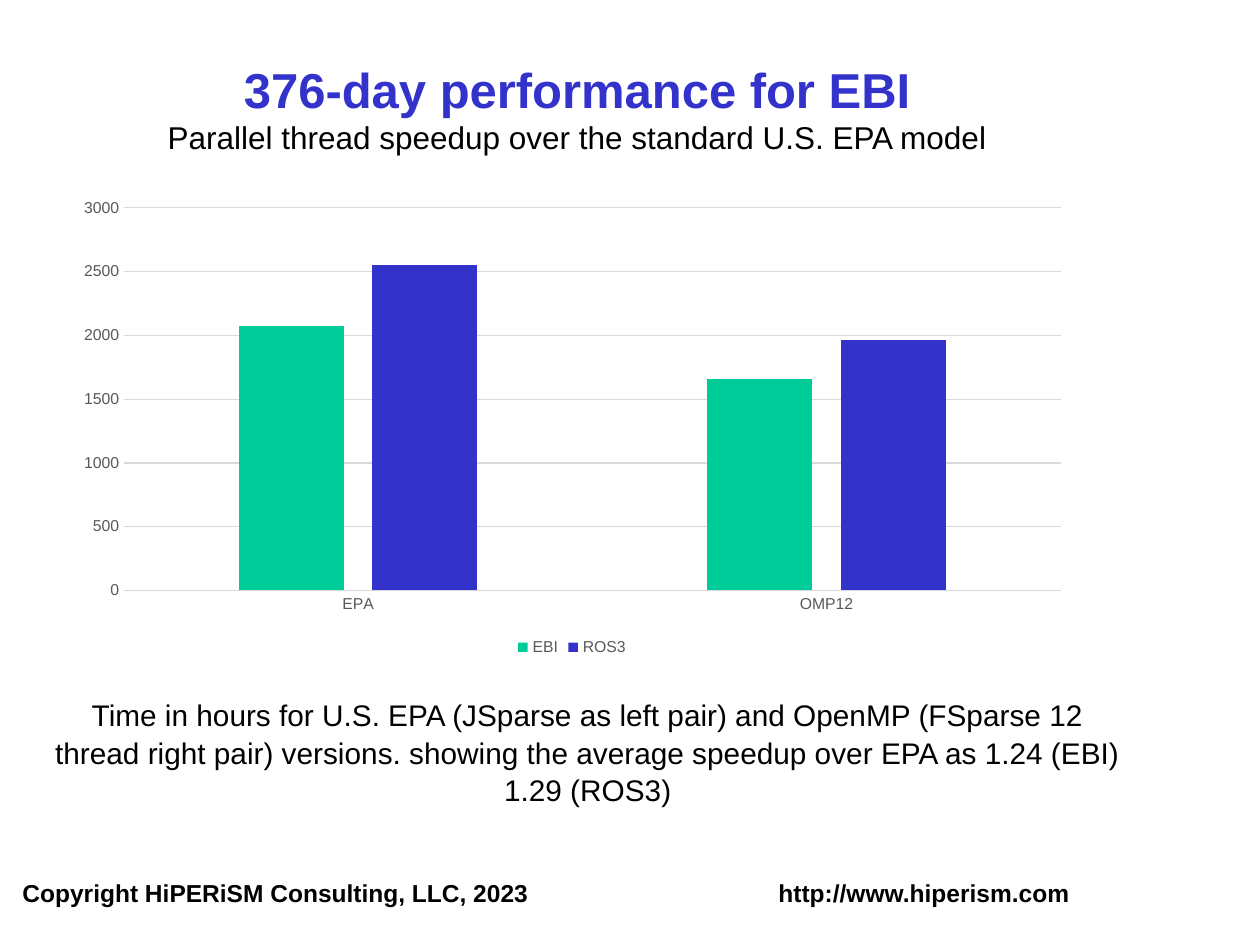
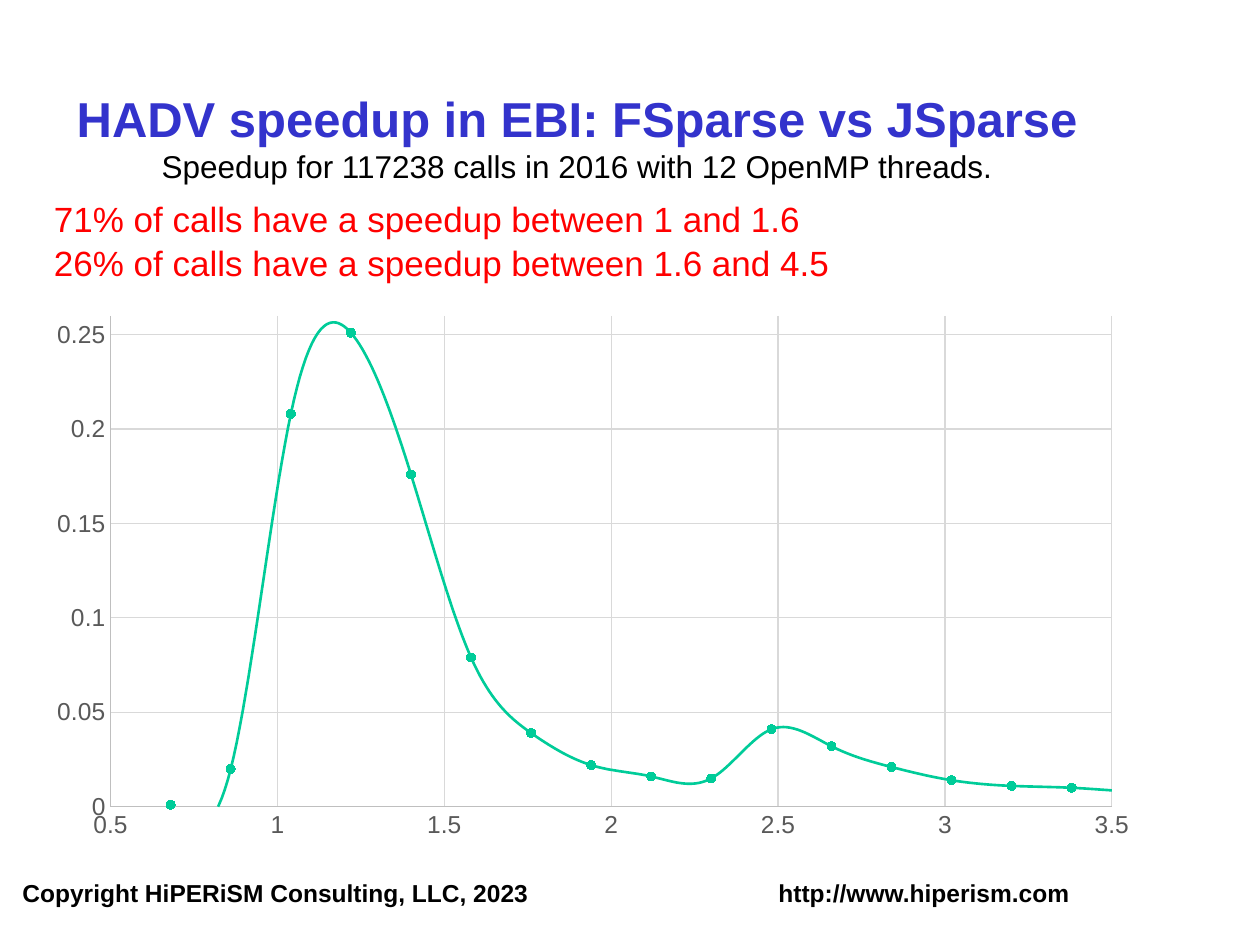
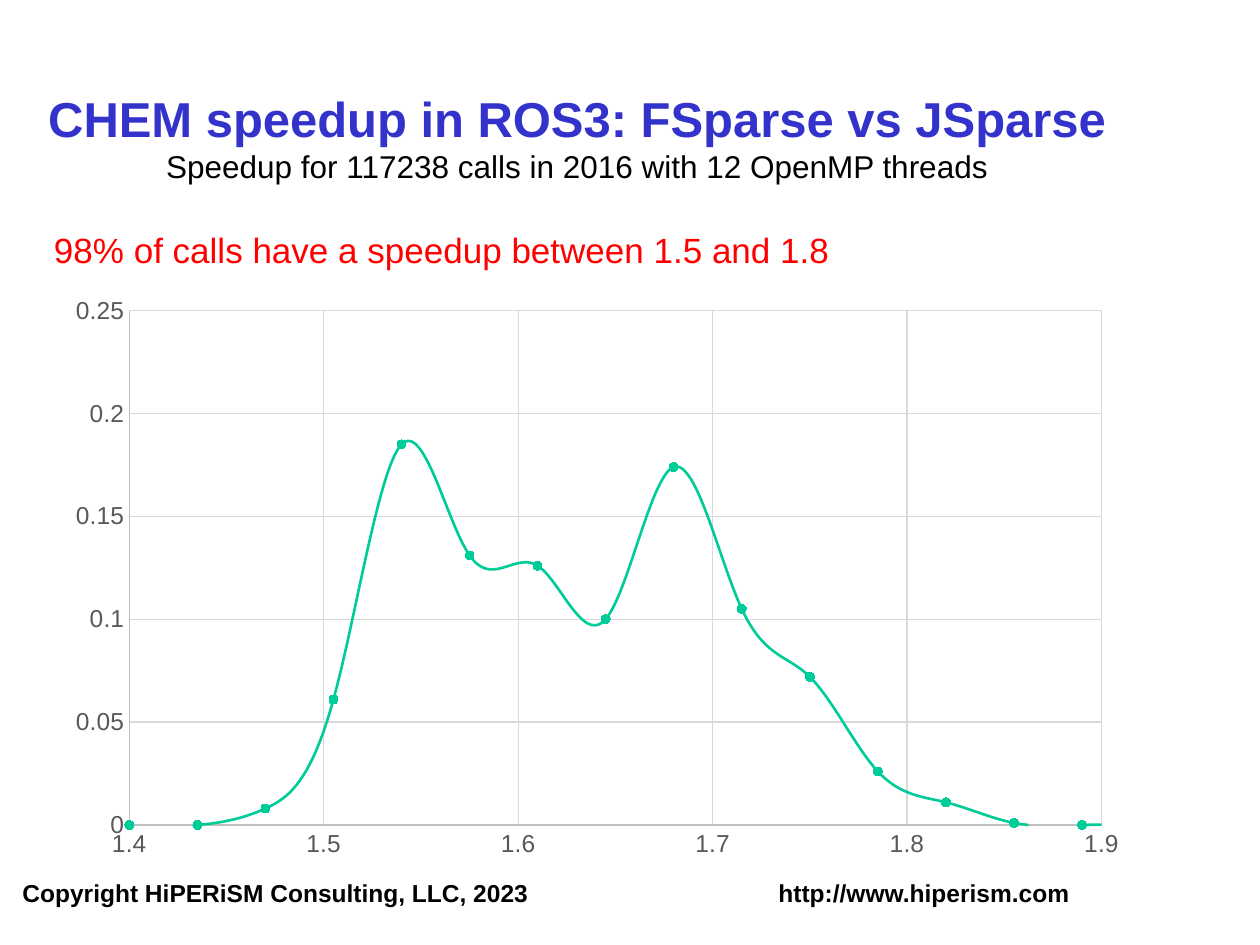
from lxml.etree import SubElement
from pptx import Presentation
from pptx.chart.data import CategoryChartData, XyChartData
from pptx.dml.color import RGBColor
from pptx.enum.chart import XL_CHART_TYPE, XL_LEGEND_POSITION, XL_MARKER_STYLE, XL_TICK_MARK
from pptx.enum.text import MSO_ANCHOR, PP_ALIGN
from pptx.oxml.ns import qn
from pptx.util import Inches, Pt

FONT = "Arial"
BLACK = RGBColor(0x00, 0x00, 0x00)
BLUE = RGBColor(0x33, 0x33, 0xCC)
GREEN = RGBColor(0x00, 0xCC, 0x99)
RED = RGBColor(0xFF, 0x00, 0x00)
LABEL_GRAY = RGBColor(0x59, 0x59, 0x59)
GRID_GRAY = RGBColor(0xD9, 0xD9, 0xD9)
AXIS_GRAY = RGBColor(0xBF, 0xBF, 0xBF)

HADV_SHARES = (0.001, 0.02, 0.208, 0.251, 0.176, 0.079, 0.039, 0.022, 0.016,
               0.015, 0.041, 0.032, 0.021, 0.014, 0.011, 0.01, 0.008, 0.007,
               0.005, 0.004, 0.005, 0.005, 0.004, 0.002, 0.001)
CHEM_SHARES = (0, 0, 0.008, 0.061, 0.185, 0.131, 0.126, 0.1, 0.174, 0.105,
               0.072, 0.026, 0.011, 0.001, 0, 0)


class SpeedupDeck:
    """Holds the deck style and the slide being filled."""

    def __init__(self):
        self.deck = Presentation()
        self.deck.slide_width = Inches(10)
        self.deck.slide_height = Inches(7.5)
        self.page = None

    def new_page(self, title, subtitle, title_height=0.95, bottom_inset=0.05):
        self.page = self.deck.slides.add_slide(self.deck.slide_layouts[6])
        self.footer()
        frame = self.text_box(0.08, 0.38, 9, title_height)
        frame.vertical_anchor = MSO_ANCHOR.MIDDLE
        frame.margin_bottom = Inches(bottom_inset)
        para = frame.paragraphs[0]
        para.alignment = PP_ALIGN.CENTER
        self.span(para, title, 28, BLUE, bold=True)
        para.add_line_break()
        self.span(para, subtitle, 18)

    def text_box(self, left, top, width, height):
        box = self.page.shapes.add_textbox(
            Inches(left), Inches(top), Inches(width), Inches(height))
        box.text_frame.word_wrap = True
        return box.text_frame

    def span(self, para, text, size, color=BLACK, bold=False):
        span = para.add_run()
        span.text = text
        self.style_font(span.font, size, color)
        span.font.bold = bold

    def style_font(self, font, size, color):
        font.name = FONT
        font.size = Pt(size)
        font.color.rgb = color

    def footer(self):
        para = self.text_box(0.08, 6.92, 9, 0.58).paragraphs[0]
        tabs = SubElement(para._p.get_or_add_pPr(), qn("a:tabLst"))
        SubElement(tabs, qn("a:tab"), pos=str(Inches(6)), algn="l")
        self.span(para, "Copyright HiPERiSM Consulting, LLC, 2023\thttp://www.hiperism.com",
                  14, bold=True)

    def body(self, place, lines, size, color, alignment=PP_ALIGN.LEFT):
        para = self.text_box(*place).paragraphs[0]
        para.alignment = alignment
        para.line_spacing = 1.05
        for index, line in enumerate(lines):
            if index:
                para.add_line_break()
            self.span(para, line, size, color)

    def chart(self, kind, place, data, plot_area):
        chart = self.page.shapes.add_chart(kind, *map(Inches, place), data).chart
        chart.has_title = False
        chart.has_legend = False
        self.style_font(chart.font, 10, BLACK)
        chart.plots[0].vary_by_categories = False
        self.place_plot(chart, plot_area)
        return chart

    def place_plot(self, chart, plot_area):
        area = chart.element.find(".//" + qn("c:plotArea"))
        for layout in area.findall(qn("c:layout")):
            area.remove(layout)
        layout = SubElement(area, qn("c:layout"))
        area.insert(0, layout)
        manual = SubElement(layout, qn("c:manualLayout"))
        settings = [("layoutTarget", "inner"), ("xMode", "edge"), ("yMode", "edge")]
        for name, value in settings + list(zip("xywh", plot_area)):
            SubElement(manual, qn(f"c:{name}"), val=str(value))

    def axis(self, axis, size, line_color, grid=True, scale=None):
        axis.major_tick_mark = axis.minor_tick_mark = XL_TICK_MARK.NONE
        self.style_font(axis.tick_labels.font, size, LABEL_GRAY)
        axis.has_major_gridlines = grid
        if grid:
            self.line(axis.major_gridlines.format.line, GRID_GRAY)
        if line_color is None:
            axis.format.line.fill.background()
        else:
            self.line(axis.format.line, line_color)
        if scale:
            axis.minimum_scale, axis.maximum_scale, axis.major_unit = scale

    def line(self, line, color, width=0.75):
        line.color.rgb = color
        line.width = Pt(width)

    def fill(self, shape_format, color):
        shape_format.fill.solid()
        shape_format.fill.fore_color.rgb = color

    def column_chart(self, place, categories, columns, plot_area):
        data = CategoryChartData()
        data.categories = categories
        for name, values, _ in columns:
            data.add_series(name, values)
        chart = self.chart(XL_CHART_TYPE.COLUMN_CLUSTERED, place, data, plot_area)
        plot = chart.plots[0]
        plot.gap_width = 219
        plot.overlap = -27
        for series, (_, _, color) in zip(plot.series, columns):
            self.fill(series.format, color)
        self.axis(chart.category_axis, 9, GRID_GRAY, grid=False)
        self.axis(chart.value_axis, 9, None, scale=(0, 3000, 500))
        chart.has_legend = True
        chart.legend.position = XL_LEGEND_POSITION.BOTTOM
        chart.legend.include_in_layout = False
        self.style_font(chart.legend.font, 9, LABEL_GRAY)

    def curve_chart(self, place, start, step, shares, x_scale, y_scale, plot_area):
        data = XyChartData()
        points = data.add_series("Series 1")
        for index, share in enumerate(shares):
            points.add_data_point(round(start + index * step, 3), share)
        chart = self.chart(XL_CHART_TYPE.XY_SCATTER_SMOOTH, place, data, plot_area)
        chart.element.find(".//" + qn("c:smooth")).set("val", "1")
        series = chart.plots[0].series[0]
        self.line(series.format.line, GREEN, 1.5)
        series.marker.style = XL_MARKER_STYLE.CIRCLE
        series.marker.size = 5
        self.fill(series.marker.format, GREEN)
        self.line(series.marker.format.line, GREEN)
        for axis, scale in ((chart.category_axis, x_scale), (chart.value_axis, y_scale)):
            self.axis(axis, 14, AXIS_GRAY, scale=scale)
            axis.tick_labels.number_format = "General"
            axis.tick_labels.number_format_is_linked = False


def main():
    show = SpeedupDeck()

    show.new_page("376-day performance for EBI",
                  "Parallel thread speedup over the standard U.S. EPA model")
    show.body((0.33, 5.47, 8.67, 1.03),
              ["Time in hours for U.S. EPA (JSparse as left pair) and OpenMP (FSparse 12 "
               "thread right pair) versions. showing the average speedup over EPA as "
               "1.24 (EBI) 1.29 (ROS3)"], 17, BLACK, PP_ALIGN.CENTER)
    show.column_chart((0.5, 1.5, 8.08, 3.75), ["EPA", "OMP12"],
                      [("EBI", (2070, 1660), GREEN), ("ROS3", (2550, 1960), BLUE)],
                      (0.06, 0.04, 0.92, 0.81))

    show.new_page("HADV speedup in EBI: FSparse vs JSparse",
                  "Speedup for 117238 calls in 2016 with 12 OpenMP threads.", 1.7, 0.34)
    show.body((0.33, 1.5, 8.33, 5.42),
              ["71% of calls have a speedup between 1 and 1.6",
               "26% of calls have a speedup between 1.6 and 4.5"], 20, RED)
    show.curve_chart((0.26, 2.42, 8.83, 4.33), 0.68, 0.18, HADV_SHARES,
                     (0.5, 3.5, 0.5), (0, 0.26, 0.05), (0.07, 0.02, 0.9, 0.9))

    show.new_page("CHEM speedup in ROS3: FSparse vs JSparse",
                  "Speedup for 117238 calls in 2016 with 12 OpenMP threads", 1.7, 0.34)
    show.body((0.33, 1.75, 8.58, 0.53),
              ["98% of calls have a speedup between 1.5 and 1.8"], 20, RED)
    show.curve_chart((0.42, 2.28, 8.67, 4.64), 1.4, 0.035, CHEM_SHARES,
                     (1.4, 1.9, 0.1), (0, 0.25, 0.05), (0.07, 0.04, 0.89, 0.88))

    show.deck.save("out.pptx")


if __name__ == "__main__":
    main()
